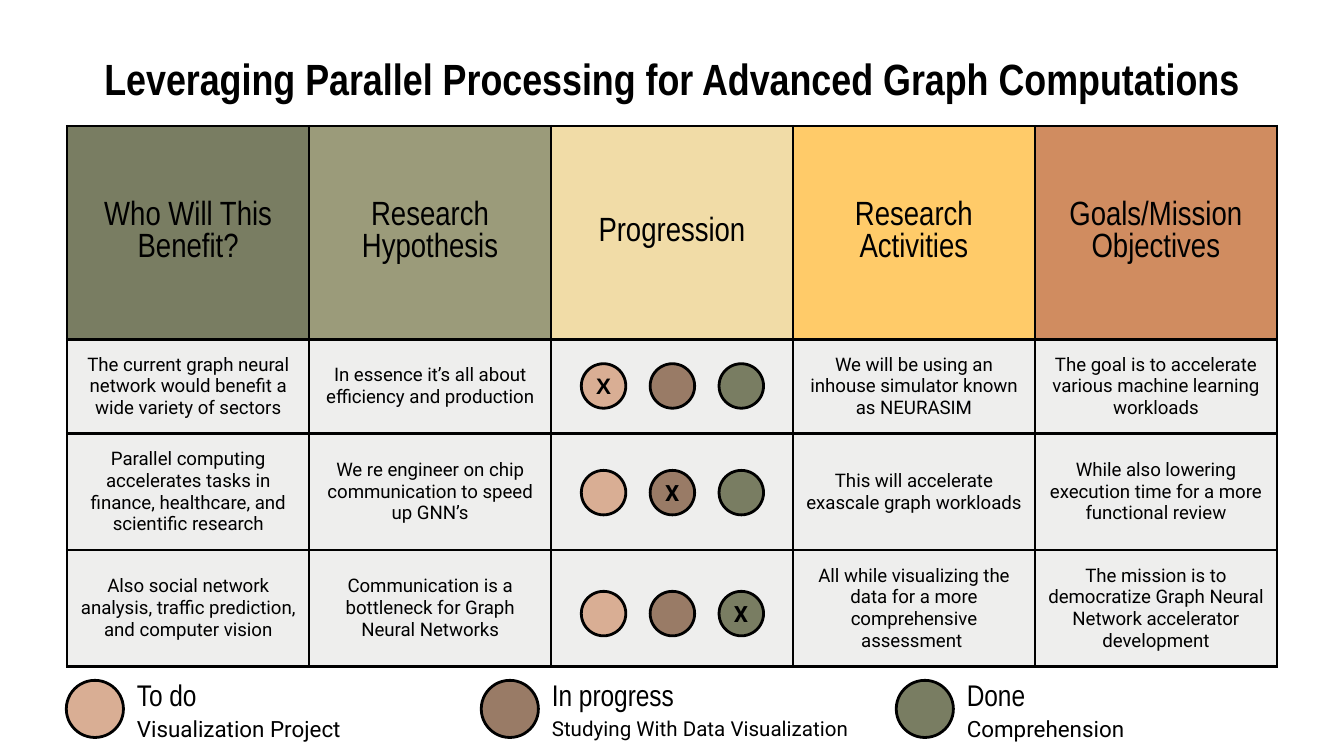
"""Build a one-slide research progress table with a status legend."""
from typing import NamedTuple

from lxml import etree
from pptx import Presentation, util as u
from pptx.dml.color import RGBColor
from pptx.enum import shapes, text
from pptx.oxml.ns import qn

PX = 5715
INSET = 91425
BLACK = RGBColor(0x00, 0x00, 0x00)
GREY = RGBColor(0xEE, 0xEE, 0xED)
PEACH = RGBColor(0xD9, 0xAE, 0x94)
BROWN = RGBColor(0x99, 0x7B, 0x66)
OLIVE = RGBColor(0x79, 0x7D, 0x62)
SAGE = RGBColor(0x9B, 0x9B, 0x7A)
SAND = RGBColor(0xF1, 0xDC, 0xA7)
AMBER = RGBColor(0xFF, 0xCB, 0x69)
COPPER = RGBColor(0xD0, 0x8C, 0x60)
HEADING, BODY = "Arial Narrow", "Roboto"
LEFT, CENTER = text.PP_ALIGN.LEFT, text.PP_ALIGN.CENTER
MIDDLE = text.MSO_ANCHOR.MIDDLE


class Column(NamedTuple):
    heading: str
    color: RGBColor
    entries: tuple[str, ...]


class Status(NamedTuple):
    label: str
    detail: str
    detail_size: int
    color: RGBColor


class Progress(NamedTuple):
    top: int
    current: int
    font: str
    align: text.PP_ALIGN


COLUMNS = (
    Column("Who Will This Benefit?", OLIVE, (
        "The current graph neural network would benefit a wide variety of sectors",
        "Parallel computing accelerates tasks in finance, healthcare, and scientific research",
        "Also social network analysis, traffic prediction, and computer vision")),
    Column("Research Hypothesis", SAGE, (
        "In essence it’s all about efficiency and production",
        "We re engineer on chip communication to speed up GNN’s",
        "Communication is a bottleneck for Graph Neural Networks")),
    Column("Progression", SAND, ("", "", "")),
    Column("Research Activities", AMBER, (
        "We will be using an inhouse simulator known as NEURASIM",
        "This will accelerate exascale graph workloads",
        "All while visualizing the data for a more comprehensive assessment ")),
    Column("Goals/Mission Objectives", COPPER, (
        "The goal is to accelerate various machine learning workloads",
        "While also lowering execution time for a more functional review",
        "The mission is to democratize Graph Neural Network accelerator development")),
)
STATUSES = (
    Status("To do", "Visualization Project", 12, PEACH),
    Status("In progress", "Studying With Data Visualization", 11, BROWN),
    Status("Done", "Comprehension", 12, OLIVE),
)
PROGRESS = (
    Progress(433, 0, "Arial", CENTER),
    Progress(560, 1, BODY, LEFT),
    Progress(704, 2, BODY, LEFT),
)
ROW_HEIGHTS = (254, 109, 109, 109)
TABLE_HEIGHT = 643


def box(x: int, y: int, w: int, h: int) -> tuple[int, ...]:
    """Turn px lengths into EMU."""
    return tuple(v * PX for v in (x, y, w, h))


def set_insets(frame) -> None:
    """Give a text frame or cell even insets and centre it vertically."""
    frame.margin_left = frame.margin_right = INSET
    frame.margin_top = frame.margin_bottom = INSET
    frame.vertical_anchor = MIDDLE


def write(tf, words: str, font: str, size: float, align, bold: bool = False) -> None:
    """Set the only paragraph of a text frame and format it."""
    tf.text = words
    p = tf.paragraphs[0]
    p.alignment = align
    for r in p.runs:
        r.font.name, r.font.size, r.font.bold = font, u.Pt(size), bold
        r.font.color.rgb = BLACK


def add_text(parent, at: tuple[int, ...], words: str, font: str, size: float,
             align=LEFT, bold: bool = False, anchor=MIDDLE) -> None:
    """Add a wrapping text box with even insets."""
    tf = parent.add_textbox(*box(*at)).text_frame
    tf.word_wrap = True
    set_insets(tf)
    tf.vertical_anchor = anchor
    write(tf, words, font, size, align, bold)


def add_circle(parent, x: int, y: int, size: int, color: RGBColor):
    """Add an outlined circle."""
    sp = parent.add_shape(shapes.MSO_SHAPE.OVAL, *box(x, y, size, size))
    sp.shadow.inherit = False
    sp.fill.solid()
    sp.fill.fore_color.rgb = color
    sp.line.color.rgb, sp.line.width = BLACK, u.Pt(1.5)
    return sp


def fill_cell(cell, words: str, font: str, size: int, color: RGBColor) -> None:
    """Write, border and fill one table cell."""
    write(cell.text_frame, words, font, size, CENTER)
    set_insets(cell)
    tc_pr = cell._tc.get_or_add_tcPr()
    for side in ("a:lnL", "a:lnR", "a:lnT", "a:lnB"):
        ln = etree.SubElement(tc_pr, qn(side), w=str(u.Pt(1.5)))
        fill = etree.SubElement(ln, qn("a:solidFill"))
        etree.SubElement(fill, qn("a:srgbClr"), val=str(BLACK))
    cell.fill.solid()
    cell.fill.fore_color.rgb = color


def add_grid(s) -> None:
    """Add the research table."""
    frame = s.shapes.add_table(len(ROW_HEIGHTS), len(COLUMNS),
                               *box(80, 150, 1440, TABLE_HEIGHT))
    table = frame.table
    for row, height in zip(table.rows, ROW_HEIGHTS):
        row.height = height * PX
    for c, column in enumerate(COLUMNS):
        table.columns[c].width = 288 * PX
        fill_cell(table.cell(0, c), column.heading, HEADING, 18, column.color)
        for r, entry in enumerate(column.entries, 1):
            fill_cell(table.cell(r, c), entry, BODY, 10, GREY)
    frame.height = TABLE_HEIGHT * PX


def add_progress(s, progress: Progress) -> None:
    """Add a row of status circles with the current one crossed."""
    group = s.shapes.add_group_shape().shapes
    for i, status in enumerate(STATUSES):
        sp = add_circle(group, 692 + 82 * i, progress.top, 53, status.color)
        if i == progress.current:
            tf = sp.text_frame
            set_insets(tf)
            tf.margin_left = 10 * PX
            write(tf, "X", progress.font, 12, progress.align, True)


def add_legend(s, x: int, status: Status) -> None:
    """Add one legend entry."""
    group = s.shapes.add_group_shape().shapes
    add_text(group, (x + 68, 849, 386, 37), status.detail, BODY, status.detail_size)
    add_text(group, (x + 68, 802, 386, 50), status.label, HEADING, 16)
    add_circle(group, x, 810, 68, status.color)


def main() -> None:
    """Build and save the slide."""
    prs = Presentation()
    prs.slide_width, prs.slide_height = 1600 * PX, 900 * PX
    s = prs.slides.add_slide(prs.slide_layouts[6])
    add_text(s.shapes, (80, 46, 1440, 85),
             "Leveraging Parallel Processing for Advanced Graph Computations",
             HEADING, 23.4, CENTER, True, text.MSO_ANCHOR.TOP)
    add_grid(s)
    for progress in PROGRESS:
        add_progress(s, progress)
    for i, status in enumerate(STATUSES):
        add_legend(s, 79 + 494 * i, status)
    prs.save("out.pptx")


if __name__ == "__main__":
    main()
